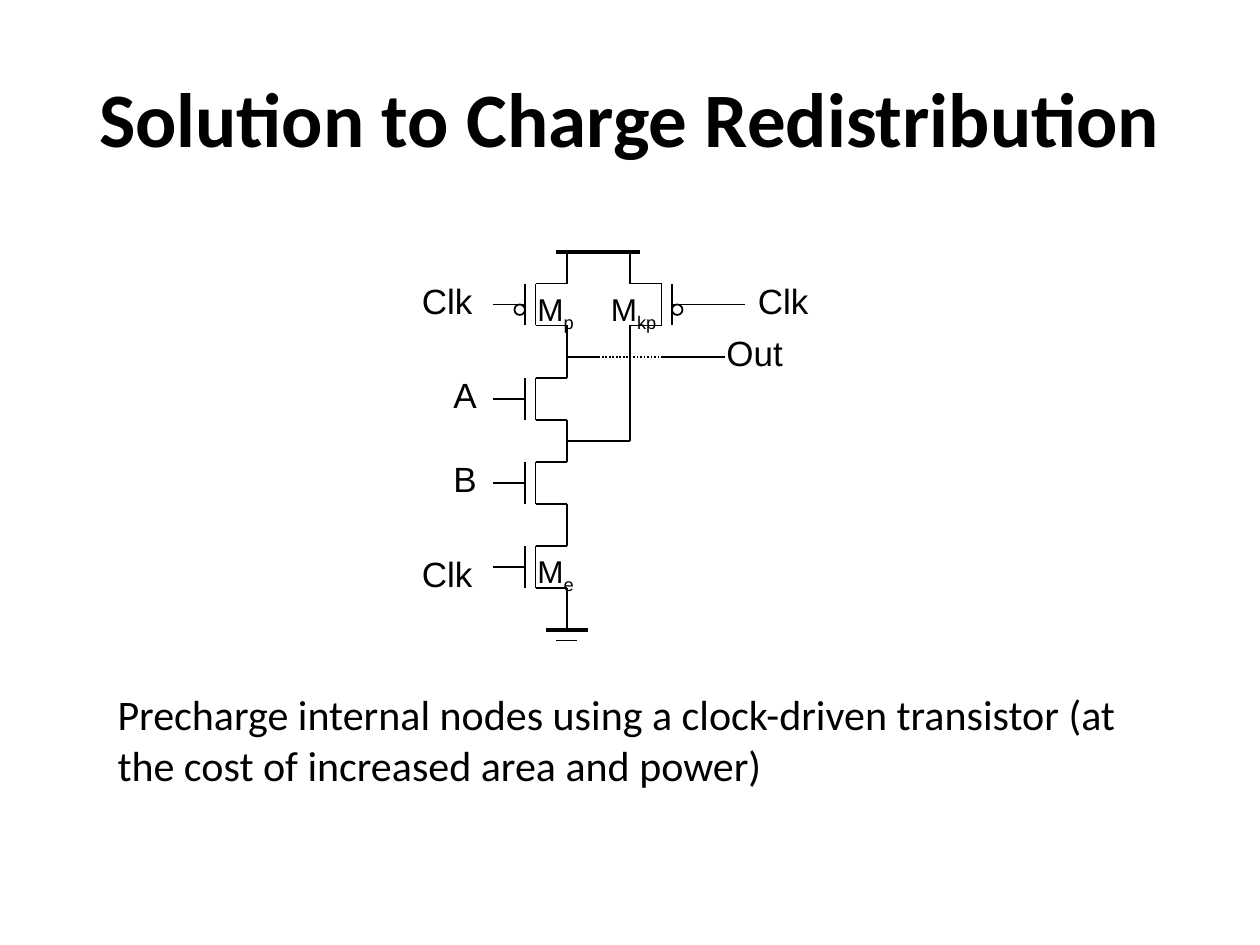
from lxml import etree
from pptx import Presentation
from pptx.dml.color import RGBColor
from pptx.enum.dml import MSO_LINE
from pptx.enum.shapes import MSO_CONNECTOR, MSO_SHAPE
from pptx.enum.text import MSO_ANCHOR, MSO_AUTO_SIZE, PP_ALIGN
from pptx.oxml.ns import qn
from pptx.util import Cm, Pt

BLACK = RGBColor(0x00, 0x00, 0x00)
STRAIGHT = MSO_CONNECTOR.STRAIGHT
OVAL = MSO_SHAPE.OVAL
DOTTED = MSO_LINE.ROUND_DOT
MIDDLE = MSO_ANCHOR.MIDDLE
CENTER = PP_ALIGN.CENTER
FIT_TEXT = MSO_AUTO_SIZE.SHAPE_TO_FIT_TEXT
FIXED_SIZE = MSO_AUTO_SIZE.NONE
GRID = 2.54 / 12

presentation = Presentation()
presentation.slide_width = Cm(25.4)
presentation.slide_height = Cm(19.05)
slide = presentation.slides.add_slide(presentation.slide_layouts[6])


def add_wire(x1, y1, x2, y2, width=1):
    wire = slide.shapes.add_connector(
        STRAIGHT, Cm(x1 * GRID), Cm(y1 * GRID), Cm(x2 * GRID), Cm(y2 * GRID))
    wire.line.color.rgb = BLACK
    wire.line.width = Pt(width)
    etree.SubElement(wire._element.spPr, qn("a:effectLst"))
    return wire


def add_text(left, top, width, height, text, size, font="Arial", subscript="", wrap=False):
    box = slide.shapes.add_textbox(Cm(left), Cm(top), Cm(width), Cm(height))
    frame = box.text_frame
    frame.word_wrap = wrap
    frame.auto_size = FIT_TEXT
    paragraph = frame.paragraphs[0]
    for part in filter(None, (text, subscript)):
        run = paragraph.add_run()
        run.text = part
        run.font.name = font
        run.font.size = Pt(size)
        run.font.color.rgb = BLACK
    if subscript:
        run._r.get_or_add_rPr().set("baseline", "-25000")
    return frame


title = add_text(1.27, 0.76, 22.86, 3.18, "Solution to Charge Redistribution", 44, "Calibri", wrap=True)
title.auto_size = FIXED_SIZE
title.vertical_anchor = MIDDLE
title.paragraphs[0].alignment = CENTER
title.paragraphs[0].runs[0].font.bold = True

LEFT_RAIL, RIGHT_RAIL = 54, 60
transistors = [
    (LEFT_RAIL, -1, 27, True),
    (LEFT_RAIL, -1, 36, False),
    (LEFT_RAIL, -1, 44, False),
    (LEFT_RAIL, -1, 52, False),
    (RIGHT_RAIL, 1, 27, True),
]
for rail, side, top, is_pmos in transistors:
    channel, gate, lead = (rail + side * offset for offset in (3, 4, 7))
    bottom = top + 4
    add_wire(rail, top - 3, rail, top)
    add_wire(channel, top, rail, top)
    add_wire(channel, top, channel, bottom)
    add_wire(channel, bottom, rail, bottom)
    add_wire(rail, bottom, rail, bottom + 3)
    add_wire(gate, top, gate, bottom)
    add_wire(lead, top + 2, gate, top + 2)
    if is_pmos:
        bubble = slide.shapes.add_shape(
            OVAL, Cm(min(gate, gate + side) * GRID), Cm((top + 2) * GRID), Cm(GRID), Cm(GRID))
        bubble.shadow.inherit = False
        bubble.fill.background()
        bubble.line.color.rgb = BLACK
        bubble.line.width = Pt(1)

add_wire(53, 24, 61, 24, 2.25)
add_wire(52, 60, 56, 60, 2.25)
add_wire(53, 61, 55, 61)
add_wire(LEFT_RAIL, 57, LEFT_RAIL, 60)
add_wire(66, 29, 71, 29)
add_wire(RIGHT_RAIL, 33, RIGHT_RAIL, 42)
add_wire(LEFT_RAIL, 42, RIGHT_RAIL, 42)
add_wire(LEFT_RAIL, 34, 57, 34)
add_wire(57, 34, 63, 34).line.dash_style = DOTTED
add_wire(63, 34, 69, 34)

signals = [
    (39, 26, 1.6, "Clk"),
    (71, 26, 1.6, "Clk"),
    (68, 31, 1.7, "Out"),
    (42, 35, 1, "A"),
    (42, 43, 1, "B"),
    (39, 52, 1.6, "Clk"),
]
for column, row, width, text in signals:
    add_text(column * GRID, row * GRID, width, 1.09, text, 20)

for column, row, width, subscript in [(50, 27, 1.27, "p"), (57, 27, 1.5, "kp"), (50, 52, 1.27, "e")]:
    add_text(column * GRID, row * GRID, width, 1.02, "M", 18, subscript=subscript)

add_text(
    2.12, 13.76, 21.56, 2.31,
    "Precharge internal nodes using a clock-driven transistor (at the cost of increased area and power)",
    24, "Calibri", wrap=True)

presentation.save("out.pptx")
